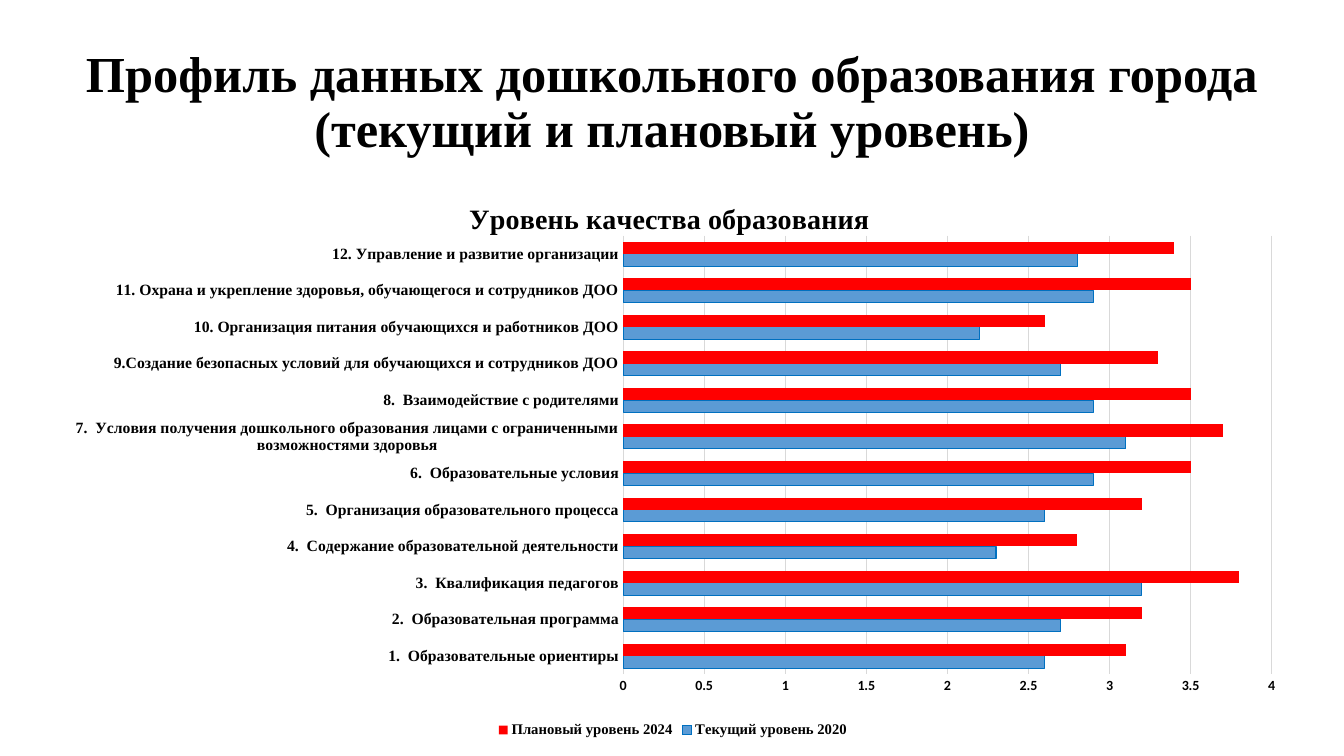
from lxml import etree
from pptx import Presentation
from pptx.chart.data import CategoryChartData
from pptx.dml.color import RGBColor
from pptx.enum.chart import XL_CHART_TYPE, XL_LEGEND_POSITION, XL_TICK_MARK
from pptx.enum.text import MSO_ANCHOR, PP_ALIGN
from pptx.oxml.ns import qn
from pptx.util import Inches, Pt

BAR_CLUSTERED = XL_CHART_TYPE.BAR_CLUSTERED
LEGEND_BOTTOM = XL_LEGEND_POSITION.BOTTOM
NO_TICKS = XL_TICK_MARK.NONE
MIDDLE = MSO_ANCHOR.MIDDLE
CENTER = PP_ALIGN.CENTER

SERIF = "Times New Roman"
SANS = "Calibri"
COLORS = {
    "text": "000000",
    "grid": "D9D9D9",
    "current": "5B9BD5",
    "current_edge": "0070C0",
    "planned": "FF0000",
}
TITLE_BOX = (0.48, 0.33, 12.37, 1.4)
CHART_BOX = (0.49, 1.78, 12.37, 5.58)
PLOT_LAYOUT = {"x": 0.46, "y": 0.1, "w": 0.52, "h": 0.78}

TITLE = "Профиль данных дошкольного образования города (текущий и плановый уровень)"
CHART_TITLE = "Уровень качества образования "
CURRENT = "Текущий уровень 2020"
PLANNED = "Плановый уровень 2024"
LEVELS = [
    ("1.  Образовательные ориентиры", 2.6, 3.1),
    ("2.  Образовательная программа", 2.7, 3.2),
    ("3.  Квалификация педагогов", 3.2, 3.8),
    ("4.  Содержание образовательной деятельности", 2.3, 2.8),
    ("5.  Организация образовательного процесса", 2.6, 3.2),
    ("6.  Образовательные условия", 2.9, 3.5),
    ("7.  Условия получения дошкольного образования лицами "
     "с ограниченными возможностями здоровья", 3.1, 3.7),
    ("8.  Взаимодействие с родителями", 2.9, 3.5),
    ("9.Создание безопасных условий для обучающихся и сотрудников ДОО", 2.7, 3.3),
    ("10. Организация питания обучающихся и работников ДОО", 2.2, 2.6),
    ("11. Охрана и укрепление здоровья, обучающегося и сотрудников ДОО", 2.9, 3.5),
    ("12. Управление и развитие организации", 2.8, 3.4),
]


def color(name):
    return RGBColor.from_string(COLORS[name])


def style_font(font, size, name):
    font.size = Pt(size)
    font.name = name
    font.bold = True
    font.color.rgb = color("text")


def style_line(line, color_name):
    line.color.rgb = color(color_name)
    line.width = Pt(0.75)


def add_title(page, box):
    title = page.shapes.title
    title.left, title.top, title.width, title.height = map(Inches, box)
    frame = title.text_frame
    frame.text = TITLE
    frame.word_wrap = True
    frame.vertical_anchor = MIDDLE
    para = frame.paragraphs[0]
    para.alignment = CENTER
    para.line_spacing = 0.9
    style_font(para.runs[0].font, 36, SERIF)


def set_plot_layout(chart):
    """Fix the inner plot area as fractions of the chart."""
    plot_area = chart.plots[0]._element.getparent()
    layout = plot_area.find(qn("c:layout"))
    if layout is None:
        layout = etree.Element(qn("c:layout"))
        plot_area.insert(0, layout)
    manual = etree.SubElement(layout, qn("c:manualLayout"))
    settings = {"layoutTarget": "inner", "xMode": "edge", "yMode": "edge", **PLOT_LAYOUT}
    for tag, value in settings.items():
        etree.SubElement(manual, qn(f"c:{tag}")).set("val", str(value))


def style_axes(chart):
    categories, values = chart.category_axis, chart.value_axis
    for axis, size, font in ((categories, 11.2, SERIF), (values, 10, SANS)):
        axis.major_tick_mark = NO_TICKS
        axis.minor_tick_mark = NO_TICKS
        style_font(axis.tick_labels.font, size, font)
    style_line(categories.format.line, "grid")
    values.format.line.fill.background()
    values.has_major_gridlines = True
    style_line(values.major_gridlines.format.line, "grid")
    values.minimum_scale = 0
    values.maximum_scale = 4
    values.major_unit = 0.5


def style_bars(plot):
    plot.gap_width = 100
    plot.overlap = 0
    plot.vary_by_categories = False
    current, planned = plot.series
    for series, name in ((current, "current"), (planned, "planned")):
        series.format.fill.solid()
        series.format.fill.fore_color.rgb = color(name)
    style_line(current.format.line, "current_edge")
    planned.format.line.fill.background()


def add_level_chart(page, box):
    names, current, planned = zip(*LEVELS)
    data = CategoryChartData()
    data.categories = names
    data.add_series(CURRENT, current)
    data.add_series(PLANNED, planned)
    chart = page.shapes.add_chart(BAR_CLUSTERED, *map(Inches, box), data).chart
    style_font(chart.font, 10, SANS)

    chart.has_title = True
    heading = chart.chart_title.text_frame
    heading.text = CHART_TITLE
    style_font(heading.paragraphs[0].runs[0].font, 20, SERIF)
    chart.chart_title.include_in_layout = False

    chart.has_legend = True
    chart.legend.position = LEGEND_BOTTOM
    chart.legend.include_in_layout = False
    style_font(chart.legend.font, 10.5, SERIF)

    style_axes(chart)
    style_bars(chart.plots[0])
    set_plot_layout(chart)


def main():
    deck = Presentation()
    deck.slide_width = Inches(13.33)
    deck.slide_height = Inches(7.5)
    page = deck.slides.add_slide(deck.slide_layouts[5])
    add_title(page, TITLE_BOX)
    add_level_chart(page, CHART_BOX)
    deck.save("out.pptx")


if __name__ == "__main__":
    main()
